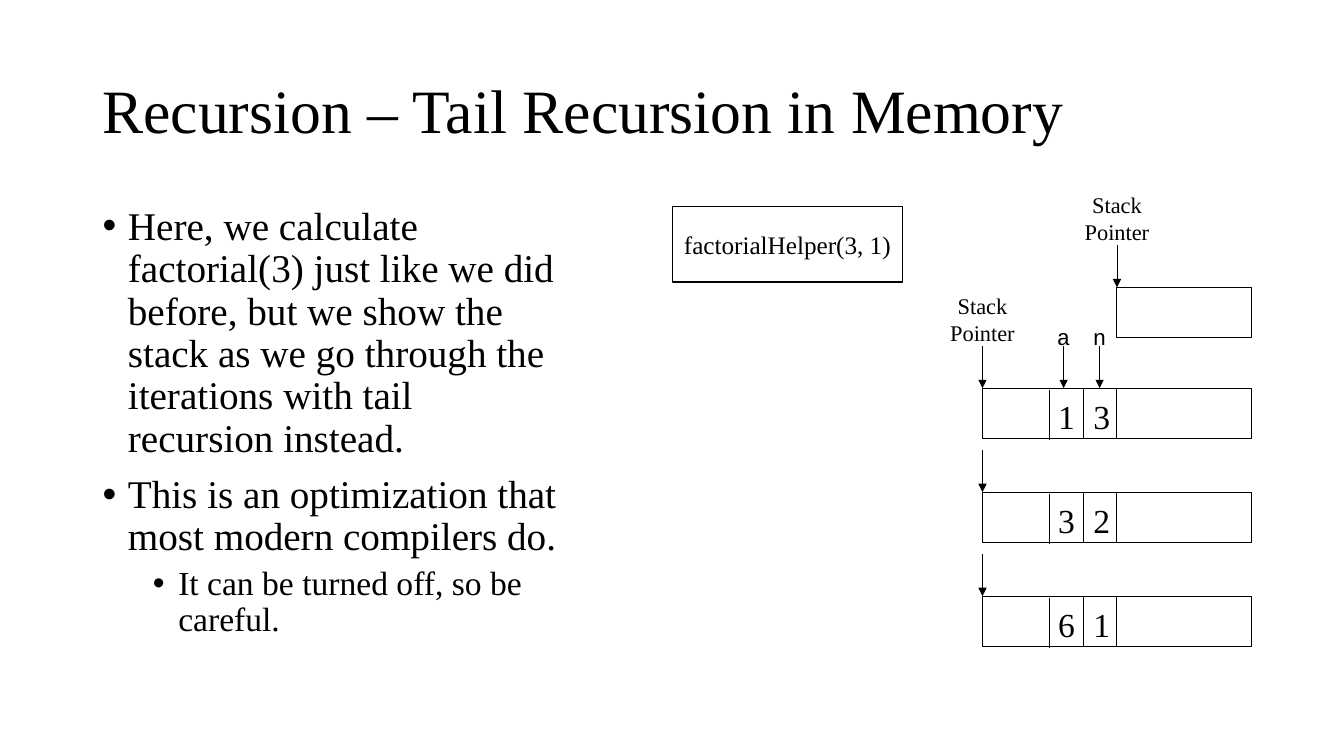
from lxml import etree
from pptx import Presentation
from pptx.dml.color import RGBColor
from pptx.enum.shapes import MSO_CONNECTOR, MSO_SHAPE
from pptx.enum.text import MSO_ANCHOR, MSO_AUTO_SIZE, PP_ALIGN
from pptx.oxml.ns import qn
from pptx.util import Cm, Pt

LEFT, CENTER = PP_ALIGN.LEFT, PP_ALIGN.CENTER
TOP, MIDDLE = MSO_ANCHOR.TOP, MSO_ANCHOR.MIDDLE
NO_FIT, GROW = MSO_AUTO_SIZE.NONE, MSO_AUTO_SIZE.SHAPE_TO_FIT_TEXT
RECT, STRAIGHT = MSO_SHAPE.RECTANGLE, MSO_CONNECTOR.STRAIGHT


def color(value):
    return RGBColor.from_string(value)


class SlideBuilder:
    font = "Times New Roman"
    mono = "Courier New"
    ink = "000000"
    paper = "FFFFFF"
    thin = 0.75

    def __init__(self, slide):
        self.s = slide

    def place(self, sp, x, y, w, h):
        sp.left, sp.top, sp.width, sp.height = Cm(x), Cm(y), Cm(w), Cm(h)

    def style(self, p, size, align=LEFT, font=None):
        p.alignment = align
        for r in p.runs:
            r.font.size = Pt(size)
            r.font.name = font or self.font
            r.font.color.rgb = color(self.ink)

    def title(self, text, x, y, w, h):
        sp = self.s.shapes.title
        self.place(sp, x, y, w, h)
        tf = sp.text_frame
        tf.text = text
        tf.auto_size, tf.vertical_anchor = NO_FIT, MIDDLE
        tf.paragraphs[0].line_spacing = 0.9
        self.style(tf.paragraphs[0], 44)

    def bullets(self, items, x, y, w, h):
        sp = self.s.placeholders[1]
        self.place(sp, x, y, w, h)
        tf = sp.text_frame
        tf.text = "\n".join(text for text, level in items)
        tf.auto_size, tf.vertical_anchor = NO_FIT, TOP
        for p, (text, level) in zip(tf.paragraphs, items):
            p.level = level
            p.line_spacing = 0.9
            p.space_before = Pt(5 if level else 10)
            self.style(p, 24 if level else 28)
            pPr = p._p.get_or_add_pPr()
            pPr.set("marL", str(Cm(0.64 + 1.27 * level)))
            pPr.set("indent", str(-Cm(0.64)))
            etree.SubElement(pPr, qn("a:buFont")).set("typeface", "Arial")
            etree.SubElement(pPr, qn("a:buChar")).set("char", "•")

    def box(self, x, y, w, h, text="", fill=None, width=thin):
        sp = self.s.shapes.add_shape(RECT, Cm(x), Cm(y), Cm(w), Cm(h))
        sp.shadow.inherit = False
        if fill:
            sp.fill.solid()
            sp.fill.fore_color.rgb = color(fill)
        else:
            sp.fill.background()
        sp.line.color.rgb = color(self.ink)
        sp.line.width = Pt(width)
        if text:
            tf = sp.text_frame
            tf.text = text
            tf.word_wrap, tf.vertical_anchor = True, MIDDLE
            self.style(tf.paragraphs[0], 18, CENTER)

    def label(self, text, x, y, w, h, size, align=CENTER, font=None):
        tf = self.s.shapes.add_textbox(Cm(x), Cm(y), Cm(w), Cm(h)).text_frame
        tf.text = text
        tf.word_wrap, tf.auto_size = False, GROW
        for p in tf.paragraphs:
            self.style(p, size, align, font)

    def down_line(self, x, y, length, arrow=False):
        cn = self.s.shapes.add_connector(
            STRAIGHT, Cm(x), Cm(y), Cm(x), Cm(y + length))
        cn.line.color.rgb = color(self.ink)
        cn.line.width = Pt(self.thin)
        if arrow:
            ln = cn.line._get_or_add_ln()
            etree.SubElement(ln, qn("a:tailEnd")).set("type", "triangle")
        etree.SubElement(cn._element.spPr, qn("a:effectLst"))


def main():
    prs = Presentation()
    prs.slide_width, prs.slide_height = Cm(33.87), Cm(19.05)
    b = SlideBuilder(prs.slides.add_slide(prs.slide_layouts[1]))

    # Title and explanation
    b.title("Recursion – Tail Recursion in Memory", 2.33, 1.01, 29.21, 3.68)
    b.bullets([
        ("Here, we calculate factorial(3) just like we did before, but we show "
         "the stack as we go through the iterations with tail recursion "
         "instead.", 0),
        ("This is an optimization that most modern compilers do.", 0),
        ("It can be turned off, so be careful.", 1),
    ], 2.33, 5.08, 12.21, 12.09)

    # Current call
    b.box(16.95, 5.21, 5.79, 1.9, "factorialHelper(3, 1)", b.paper, 1)

    # Stack geometry
    frame_x, frame_w, frame_h = 24.76, 3.39, 1.27
    caller_x = frame_x + frame_w
    a_x, n_x = frame_x + frame_w / 2, frame_x + frame_w * 3 / 4
    first_y, row_step, arrow_h = 9.78, 2.62, 1.06

    # Stack before the call
    caller_y = first_y - 2 * frame_h
    b.box(caller_x, caller_y, frame_w, frame_h)

    # Stack pointers
    for x, y in ((caller_x, caller_y), (frame_x, first_y)):
        b.label("Stack\nPointer", x - 1.08, y - 2.54, 2.16, 1.63, 16)
    b.down_line(caller_x, caller_y - arrow_h, arrow_h, arrow=True)

    # Stack in each iteration
    for i, (a, n) in enumerate((("1", "3"), ("3", "2"), ("6", "1"))):
        y = first_y + i * row_step
        b.box(caller_x, y, frame_w, frame_h)
        b.box(frame_x, y, frame_w, frame_h)
        b.down_line(frame_x, y - arrow_h, arrow_h, arrow=True)
        b.down_line(a_x, y + 0.04, frame_h)
        b.down_line(n_x, y, frame_h)
        b.label(a, a_x - 0.04, y + 0.08, 0.93, 1.27, 24, LEFT)
        b.label(n, n_x, y + 0.08, 0.93, 1.27, 24, LEFT)

    # Parameter names
    for name, x in (("a", a_x + 0.35), ("n", n_x + 0.41)):
        b.down_line(x, first_y - arrow_h, arrow_h, arrow=True)
        b.label(name, x - 0.43, first_y - 1.75, 0.86, 0.94, 16, font=b.mono)

    prs.save("out.pptx")


if __name__ == "__main__":
    main()
